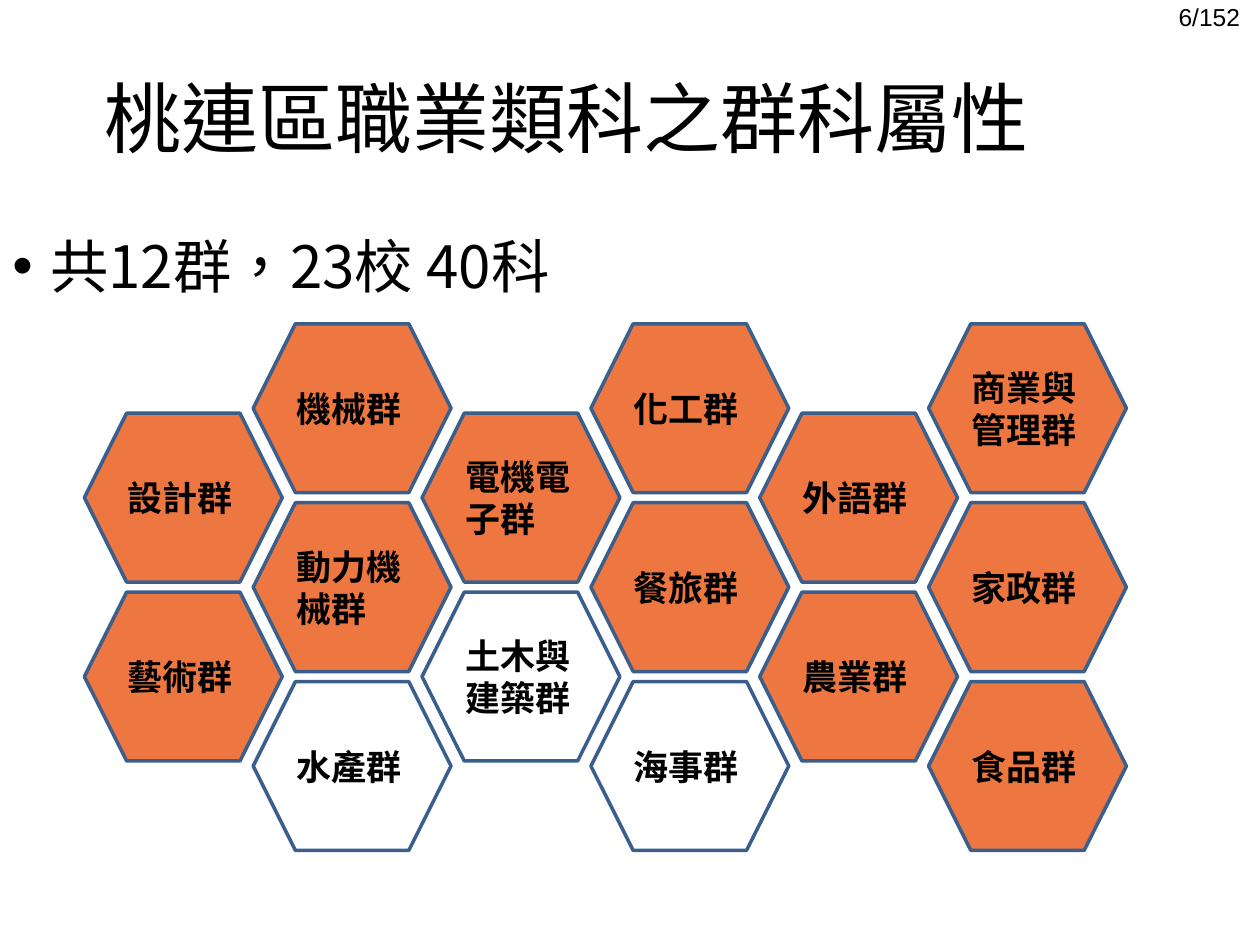
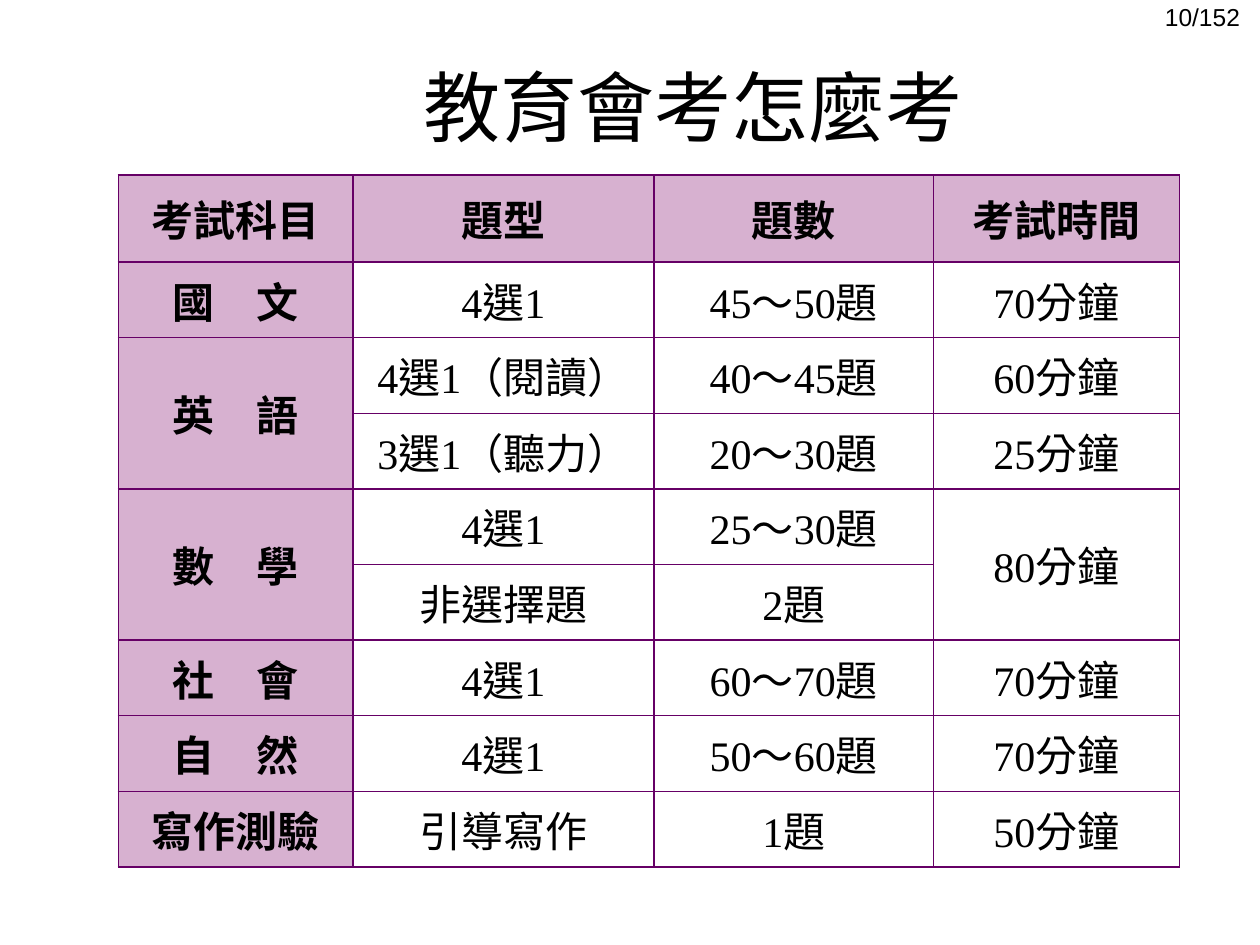
from lxml.etree import SubElement
from pptx import Presentation
from pptx.dml.color import RGBColor
from pptx.enum.lang import MSO_LANGUAGE_ID as Language
from pptx.enum.shapes import MSO_SHAPE as Shape
from pptx.enum.text import MSO_ANCHOR as Anchor, PP_ALIGN as Align
from pptx.oxml.ns import qn
from pptx.util import Inches, Pt

BLACK, ORANGE, NAVY = "000000", "EE7640", "3A5F8C"
PURPLE, MAUVE = "660066", "D7B1D0"
CJK_FONT = "Noto Sans CJK SC"

GROUPS_TITLE = "桃連區職業類科之群科屬性"
GROUPS_SUMMARY = "共12群，23校 40科"
GROUP_COLUMNS = [
    ["設計群", "藝術群"],
    ["機械群", "動力機械群", "水產群"],
    ["電機電子群", "土木與建築群"],
    ["化工群", "餐旅群", "海事群"],
    ["外語群", "農業群"],
    ["商業與管理群", "家政群", "食品群"],
]
UNFILLED_GROUPS = {"水產群", "土木與建築群", "海事群"}
HEX_LEFT, HEX_TOP = 0.67, 2.57
HEX_WIDTH, HEX_HEIGHT = 1.57, 1.34
COLUMN_STEP, HALF_ROW_STEP = 1.34, 0.71

EXAM_TITLE = "教育會考怎麼考"
# None continues the cell above it.
EXAM_ROWS = [
    ("考試科目", "題型", "題數", "考試時間"),
    ("國　文", "4選1", "45～50題", "70分鐘"),
    ("英　語", "4選1（閱讀）", "40～45題", "60分鐘"),
    (None, "3選1（聽力）", "20～30題", "25分鐘"),
    ("數　學", "4選1", "25～30題", "80分鐘"),
    (None, "非選擇題", "2題", None),
    ("社　會", "4選1", "60～70題", "70分鐘"),
    ("自　然", "4選1", "50～60題", "70分鐘"),
    ("寫作測驗", "引導寫作", "1題", "50分鐘"),
]
EXAM_COLUMN_WIDTHS = [1.86, 2.39, 2.22, 1.95]
EXAM_HEADER_HEIGHT, EXAM_ROW_HEIGHT = 0.69, 0.6


def color(value):
    return RGBColor.from_string(value)


def set_attributes(target, values):
    for name, value in values.items():
        setattr(target, name, value)


def write(frame, text, size, font="Calibri", bold=False, align=Align.LEFT):
    """Put one formatted paragraph in a text frame and return it."""
    para = frame.paragraphs[0]
    para.alignment = align
    span = para.add_run()
    span.text = text
    set_attributes(span.font, {
        "size": Pt(size), "bold": bold, "name": font,
        "language_id": Language.TRADITIONAL_CHINESE,
    })
    span.font.color.rgb = color(BLACK)
    SubElement(span.font._element, qn("a:ea"), typeface=CJK_FONT)
    return para


def add_text(page, place, text, size, anchor=Anchor.TOP, **style):
    box = page.shapes.add_textbox(*map(Inches, place))
    set_attributes(box.text_frame, {"word_wrap": True, "vertical_anchor": anchor})
    return write(box.text_frame, text, size, **style)


def add_page(deck, number, title, title_place, title_font):
    page = deck.slides.add_slide(deck.slide_layouts[6])
    add_text(page, (8.54, 0, 1.4, 0.3), f"{number}/152", 14, Anchor.BOTTOM,
             font="Arial", align=Align.RIGHT)
    add_text(page, title_place, title, 44, Anchor.MIDDLE,
             font=title_font, align=Align.CENTER)
    return page


def add_bullet(para):
    properties = para._p.get_or_add_pPr()
    properties.set("marL", str(Inches(0.3)))
    properties.set("indent", str(Inches(-0.3)))
    SubElement(properties, qn("a:buFont"), typeface="Arial")
    SubElement(properties, qn("a:buChar"), char="•")


def add_hexagon(page, left, top, group):
    place = map(Inches, (left, top, HEX_WIDTH, HEX_HEIGHT))
    hexagon = page.shapes.add_shape(Shape.HEXAGON, *place)
    hexagon.shadow.inherit = False
    if group in UNFILLED_GROUPS:
        hexagon.fill.background()
    else:
        hexagon.fill.solid()
        hexagon.fill.fore_color.rgb = color(ORANGE)
    hexagon.line.color.rgb = color(NAVY)
    hexagon.line.width = Pt(2)
    set_attributes(hexagon.text_frame, {
        "word_wrap": True, "vertical_anchor": Anchor.MIDDLE})
    write(hexagon.text_frame, group, 20, bold=True)


def add_honeycomb(page):
    for column, groups in enumerate(GROUP_COLUMNS):
        first_half_row = 1 - column % 2
        for row, group in enumerate(groups):
            half_rows = first_half_row + 2 * row
            add_hexagon(page, HEX_LEFT + column * COLUMN_STEP,
                        HEX_TOP + half_rows * HALF_ROW_STEP, group)


def add_borders(cell):
    properties = cell._tc.get_or_add_tcPr()
    for side in ("lnL", "lnR", "lnT", "lnB"):
        line = SubElement(properties, qn(f"a:{side}"), w=str(Pt(1)))
        fill = SubElement(line, qn("a:solidFill"))
        SubElement(fill, qn("a:srgbClr"), val=PURPLE)


def format_cell(cell, is_heading):
    margin = Inches(0.02)
    set_attributes(cell, {
        "margin_left": margin, "margin_right": margin, "margin_top": margin,
        "margin_bottom": margin, "vertical_anchor": Anchor.MIDDLE,
    })
    add_borders(cell)
    if is_heading:
        cell.fill.solid()
        cell.fill.fore_color.rgb = color(MAUVE)
    else:
        cell.fill.background()


def add_exam_table(page):
    heights = [EXAM_HEADER_HEIGHT] + [EXAM_ROW_HEIGHT] * (len(EXAM_ROWS) - 1)
    place = map(Inches, (0.94, 1.39, sum(EXAM_COLUMN_WIDTHS), sum(heights)))
    table = page.shapes.add_table(
        len(EXAM_ROWS), len(EXAM_COLUMN_WIDTHS), *place).table
    set_attributes(table, {"first_row": False, "horz_banding": False})
    for column, width in zip(table.columns, EXAM_COLUMN_WIDTHS):
        column.width = Inches(width)
    for row, height in zip(table.rows, heights):
        row.height = Inches(height)
    for r, texts in enumerate(EXAM_ROWS):
        for c, text in enumerate(texts):
            cell = table.cell(r, c)
            is_heading = r == 0 or c == 0
            format_cell(cell, is_heading)
            if text is None:
                table.cell(r - 1, c).merge(cell)
            else:
                font = CJK_FONT if is_heading else "Times New Roman"
                write(cell.text_frame, text, 24, font, is_heading, Align.CENTER)


def main():
    deck = Presentation()
    set_attributes(deck, {"slide_width": Inches(10), "slide_height": Inches(7.5)})

    groups_page = add_page(deck, 6, GROUPS_TITLE, (0, 0.3, 9, 1.25), "Calibri")
    add_bullet(add_text(groups_page, (0, 1.78, 8.9, 0.63), GROUPS_SUMMARY, 33.3,
                        font=CJK_FONT))
    add_honeycomb(groups_page)

    exam_page = add_page(deck, 10, EXAM_TITLE, (1, 0.21, 9, 1.25), CJK_FONT)
    add_exam_table(exam_page)
    deck.save("out.pptx")


if __name__ == "__main__":
    main()
